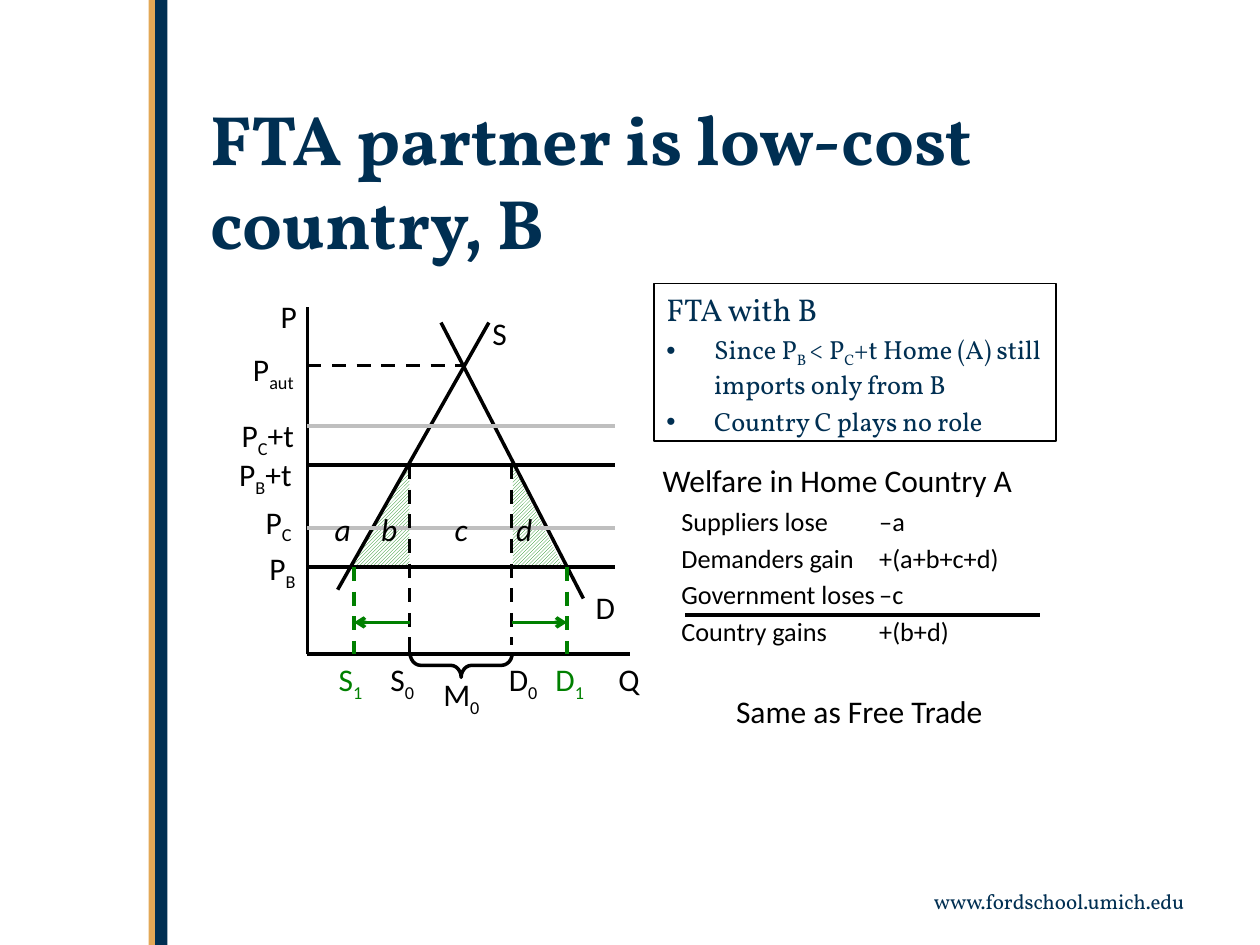
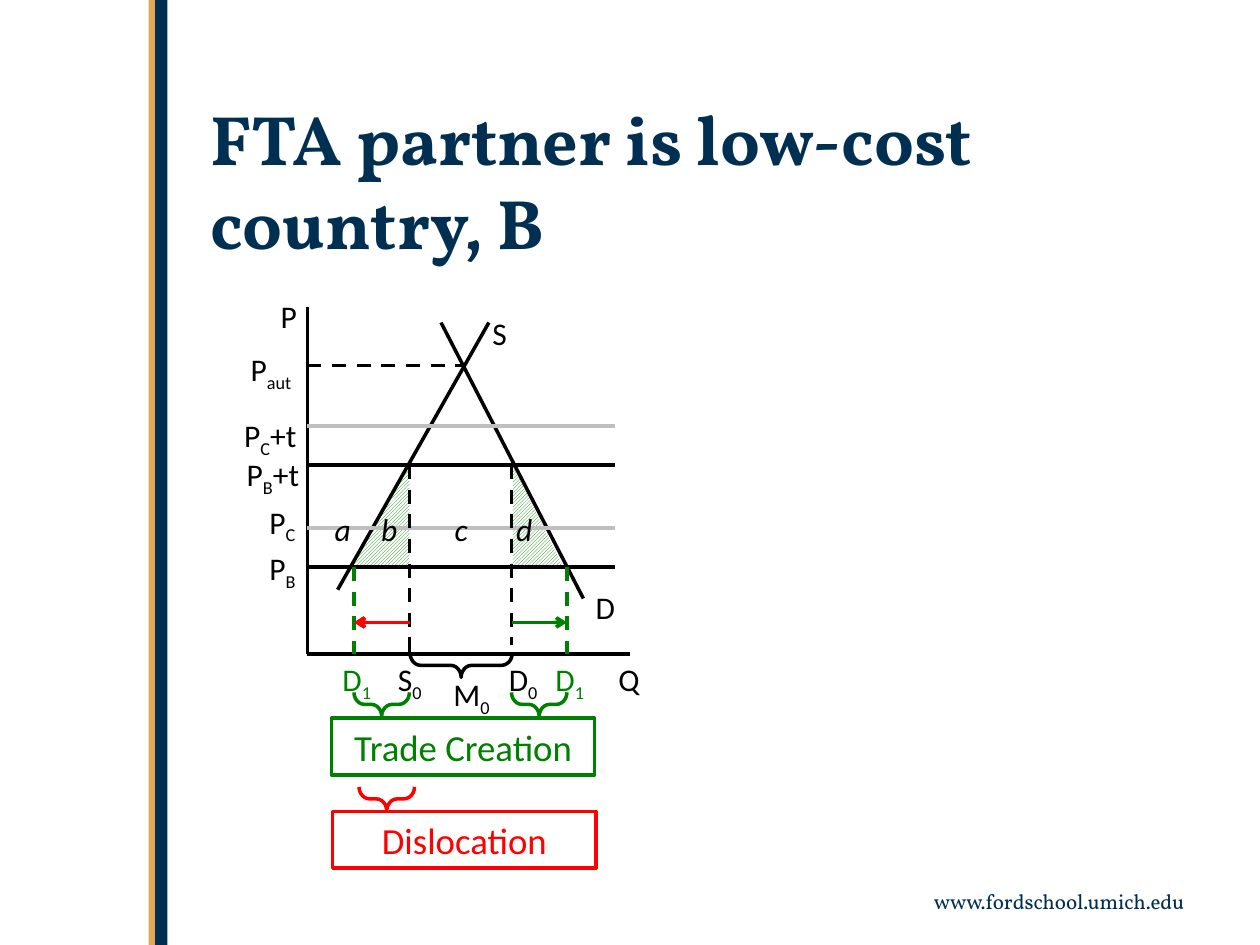
from lxml import etree
from pptx import Presentation
from pptx.dml.color import RGBColor
from pptx.enum.dml import MSO_LINE, MSO_PATTERN
from pptx.enum.shapes import MSO_CONNECTOR, MSO_SHAPE
from pptx.enum.text import PP_ALIGN
from pptx.oxml.ns import qn
from pptx.util import Inches, Pt

COLORS = {name: RGBColor.from_string(value) for name, value in {
    "navy": "002F52", "gold": "E3A856", "black": "000000", "gray": "BFBFBF",
    "green": "008000", "red": "FF0000", "white": "FFFFFF"}.items()}
LEFT, CENTER, RIGHT = PP_ALIGN.LEFT, PP_ALIGN.CENTER, PP_ALIGN.RIGHT


def add_text(slide, box, paragraphs, size, color="black", font="Calibri",
             align=LEFT, bold=False, italic=False):
    """Each paragraph is a list of runs; a leading _ makes a subscript."""
    text_box = slide.shapes.add_textbox(*map(Inches, box))
    frame = text_box.text_frame
    frame.word_wrap = True
    for i, runs in enumerate(paragraphs):
        paragraph = frame.paragraphs[0] if i == 0 else frame.add_paragraph()
        paragraph.alignment = align
        if i:
            paragraph.space_before = Pt(3)
        for text in runs:
            run = paragraph.add_run()
            run.text = text.removeprefix("_")
            run.font.size, run.font.name = Pt(size), font
            run.font.bold, run.font.italic = bold, italic
            run.font.color.rgb = COLORS[color]
            if text.startswith("_"):
                run.font._element.set("baseline", "-25000")
    return text_box


def add_line(slide, start, end, color="black", dashed=False, arrow=False):
    line = slide.shapes.add_connector(
        MSO_CONNECTOR.STRAIGHT, *map(Inches, (*start, *end)))
    line.line.color.rgb = COLORS[color]
    line.line.width = Pt(2)
    if dashed:
        line.line.dash_style = MSO_LINE.DASH
    if arrow:
        etree.SubElement(line.line._get_or_add_ln(), qn("a:tailEnd"), type="arrow")
    etree.SubElement(line._element.spPr, qn("a:effectLst"))


prs = Presentation()
prs.slide_width, prs.slide_height = Inches(10), Inches(7.5)

# Diagram coordinates
axis_x, axis_y, price_end = 2.44, 5.19, 4.88
p_aut, p_c_tariff, p_b_tariff, p_c, p_b = 2.9, 3.38, 3.69, 4.19, 4.5
s1, s0, d0, d1 = 2.81, 3.25, 4.06, 4.5
arrow_y = 4.94

# Runs, left on each slide, top, colour
labels = [
    (["P"], (2.13, 2.13), 2.31, "black"),
    (["S"], (3.81, 3.81), 2.44, "black"),
    (["P", "_aut"], (1.91, 1.89), 2.73, "black"),
    (["P", "_C", "+t"], (1.82, 1.84), 3.25, "black"),
    (["P", "_B", "+t"], (1.8, 1.86), 3.56, "black"),
    (["P", "_C"], (2.01, 2.04), 3.94, "black"),
    (["P", "_B"], (2.04, 2.04), 4.31, "black"),
    (["D"], (4.63, 4.63), 4.62, "black"),
    (["Q"], (4.81, 4.81), 5.19, "black"),
    (["S", "_0"], (3, 3.06), 5.19, "black"),
    (["D", "_0"], (3.94, 3.94), 5.19, "black"),
    (["D", "_1"], (4.31, 4.31), 5.19, "green"),
    (["M", "_0"], (3.42, 3.5), 5.31, "black"),
]
first_quantity = [(["S", "_1"], 2.59), (["D", "_1"], 2.62)]

for index in range(2):
    slide = prs.slides.add_slide(prs.slide_layouts[6])

    # Side bands, title and footer
    for left, width, color in [(1.23, 0.1, "navy"), (1.18, 0.05, "gold")]:
        band = slide.shapes.add_shape(
            MSO_SHAPE.RECTANGLE, Inches(left), 0, Inches(width), prs.slide_height)
        band.shadow.inherit = False
        band.fill.solid()
        band.fill.fore_color.rgb = COLORS[color]
        band.line.fill.background()
    add_text(slide, (1.57, 0.71, 7.92, 1.23), [["FTA partner is low-cost country, B"]],
             40, "navy", "Vollkorn", bold=True)
    add_text(slide, (7, 7, 2.5, 0.3), [["www.fordschool.umich.edu"]],
             12, "navy", "Vollkorn", RIGHT)

    # Welfare triangles b and d
    for left, width, flipped in [(2.79, 0.46, True), (4.07, 0.4, False)]:
        triangle = slide.shapes.add_shape(
            MSO_SHAPE.RIGHT_TRIANGLE, Inches(left), Inches(p_b_tariff),
            Inches(width), Inches(p_b - p_b_tariff))
        triangle.shadow.inherit = False
        triangle.fill.patterned()
        triangle.fill.pattern = MSO_PATTERN.DARK_UPWARD_DIAGONAL
        triangle.fill.fore_color.rgb = COLORS["green"]
        triangle.fill.back_color.rgb = COLORS["white"]
        triangle.line.fill.background()
        if flipped:
            triangle._element.spPr.xfrm.set("flipH", "1")

    # Axes, demand and supply
    add_line(slide, (axis_x, axis_y), (5, axis_y))
    add_line(slide, (axis_x, axis_y), (axis_x, 2.44))
    add_line(slide, (4.63, 4.75), (3.5, 2.56))
    add_line(slide, (2.68, 4.68), (3.88, 2.56))

    # Prices and quantities
    add_line(slide, (axis_x, p_aut), (3.69, p_aut), dashed=True)
    for price, color in [(p_b, "black"), (p_c, "gray"),
                         (p_b_tariff, "black"), (p_c_tariff, "gray")]:
        add_line(slide, (axis_x, price), (price_end, price), color)
    for quantity, top, bottom, color in [
            (s0, p_b_tariff, axis_y, "black"), (d0, p_b_tariff, 5.12, "black"),
            (s1, p_b, axis_y, "green"), (d1, p_b, axis_y, "green")]:
        add_line(slide, (quantity, top), (quantity, bottom), color, dashed=True)
    add_line(slide, (s0, arrow_y), (s1, arrow_y), "green", arrow=True)
    add_line(slide, (d0, arrow_y), (d1, arrow_y), "green", arrow=True)
    if index == 1:
        add_line(slide, (s0, arrow_y), (s1, arrow_y), "red", arrow=True)

    # Diagram labels
    quantity_runs, quantity_left = first_quantity[index]
    for runs, lefts, top, color in labels + [
            (quantity_runs, (quantity_left,) * 2, 5.19, "green")]:
        label = add_text(slide, (lefts[index], top, 0.7, 0.4), [runs], 18, color)
        label.text_frame.margin_right = 0
    for area, left in zip("abcd", (2.44, 2.81, 3.38, 3.88)):
        add_text(slide, (left, 4, 0.56, 0.4), [[area]], 18, align=CENTER, italic=True)

    # Braces: centre, middle height, span, colour
    braces = [(3.66, 5.28, 0.81, "black")]
    if index == 1:
        braces += [(3.03, 5.59, 0.44, "green"), (4.28, 5.59, 0.44, "green"),
                   (3.07, 6.34, 0.44, "red")]
    for center, middle, span, color in braces:
        depth = 0.19
        brace = slide.shapes.add_shape(
            MSO_SHAPE.LEFT_BRACE, Inches(center - depth / 2),
            Inches(middle - span / 2), Inches(depth), Inches(span))
        brace.rotation = 270
        brace.adjustments[0] = 0.44
        brace.shadow.inherit = False
        brace.fill.background()
        brace.line.color.rgb = COLORS[color]
        brace.line.width = Pt(2)

    if index == 0:
        # Agreement with B
        agreement = add_text(slide, (5.19, 2.25, 3.19, 1.25), [
            ["FTA with B"],
            ["Since P", "_B ", "< P", "_C", "+t Home (A) still imports only from B"],
            ["Country C plays no role"]], 15, "navy", "Vollkorn")
        agreement.line.color.rgb = COLORS["black"]
        agreement.line.width = Pt(0.75)
        heading, *points = agreement.text_frame.paragraphs
        heading.runs[0].font.size = Pt(18)
        for point in points:
            properties = point._p.get_or_add_pPr()
            properties.set("marL", str(Inches(0.38)))
            properties.set("indent", str(-Inches(0.38)))
            etree.SubElement(properties, qn("a:buFont"), typeface="Arial")
            etree.SubElement(properties, qn("a:buChar"), char="•")

        # Welfare sum
        add_text(slide, (5.16, 3.61, 3.19, 0.4), [["Welfare in Home Country A"]], 18)
        welfare = add_text(slide, (5.31, 3.96, 3.07, 1.28), [
            ["Suppliers lose\t–a"],
            ["Demanders gain\t+(a+b+c+d)"],
            ["Government loses\t–c"],
            ["Country gains\t+(b+d)"]], 15)
        for row in welfare.text_frame.paragraphs:
            tabs = etree.SubElement(row._p.get_or_add_pPr(), qn("a:tabLst"))
            etree.SubElement(tabs, qn("a:tab"), pos=str(Inches(1.57)), algn="l")
        add_line(slide, (5.44, 4.88), (8.25, 4.88))
        add_text(slide, (5.38, 5.44, 2.88, 0.4), [["Same as Free Trade"]],
                 18, align=CENTER)
    else:
        # Outcomes of the two supply shifts
        for outcome, left, top, color in [("Trade Creation", 2.63, 5.7, "green"),
                                          ("Dislocation", 2.64, 6.44, "red")]:
            frame = add_text(slide, (left, top, 2.09, 0.45), [[outcome]],
                             21, color, align=CENTER)
            frame.line.color.rgb = COLORS[color]
            frame.line.width = Pt(2)

prs.save("out.pptx")
